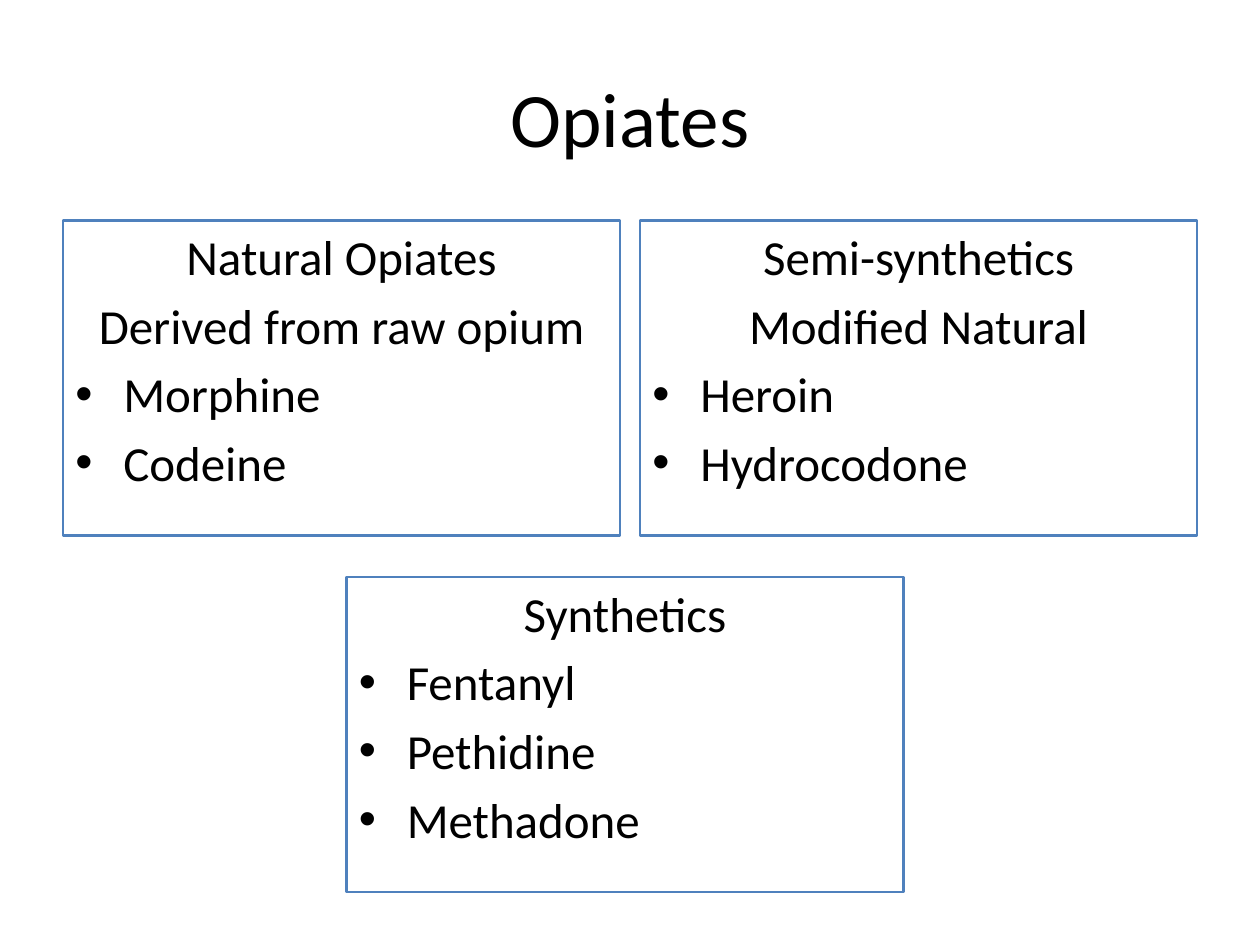
from pptx import Presentation
from pptx.dml.color import RGBColor
from pptx.enum.shapes import MSO_SHAPE as Shape
from pptx.enum.text import MSO_ANCHOR as Anchor, PP_ALIGN as Align
from pptx.oxml.ns import qn
from pptx.util import Inches, Pt
from lxml.etree import SubElement as Sub

BLACK = RGBColor(0x00, 0x00, 0x00)
BLUE = RGBColor(0x4F, 0x81, 0xBD)

WIDE, HIGH = 4.42, 2.5
LEFT, RIGHT, MID = 0.5, 5.08, 2.75
TOP, LOW = 1.75, 4.58

CARDS = [
    (LEFT, TOP, ["Natural Opiates", "Derived from raw opium"],
     ["Morphine", "Codeine"]),
    (RIGHT, TOP, ["Semi-synthetics", "Modified Natural"],
     ["Heroin", "Hydrocodone"]),
    (MID, LOW, ["Synthetics"], ["Fentanyl", "Pethidine", "Methadone"]),
]


def apply(item, vals):
    for name, val in vals.items():
        setattr(item, name, val)


class Deck:
    font = {"name": "Calibri", "bold": False}
    big, body = Pt(44), Pt(28)
    gap = Pt(5.6)
    dent = Inches(0.38)

    def __init__(self):
        self.prs = Presentation()
        apply(self.prs, {"slide_width": Inches(10),
                         "slide_height": Inches(7.5)})
        self.slide = self.prs.slides.add_slide(self.prs.slide_layouts[5])

    def label(self, par, text, size, align):
        par.alignment = align
        run = par.add_run()
        run.text = text
        apply(run.font, {**self.font, "size": size})
        run.font.color.rgb = BLACK

    def title(self, text):
        head = self.slide.shapes.title
        apply(head, {"left": Inches(0.5), "top": Inches(0.3),
                     "width": Inches(9), "height": Inches(1.25)})
        frame = head.text_frame
        frame.vertical_anchor = Anchor.MIDDLE
        self.label(frame.paragraphs[0], text, self.big, Align.CENTER)

    def bullet(self, par):
        props = par._p.get_or_add_pPr()
        props.set("marL", str(self.dent))
        props.set("indent", str(-self.dent))
        Sub(props, qn("a:buFont")).set("typeface", "Arial")
        Sub(props, qn("a:buChar")).set("char", "•")

    def card(self, left, top, heads, drugs):
        box = self.slide.shapes.add_shape(
            Shape.RECTANGLE, Inches(left), Inches(top),
            Inches(WIDE), Inches(HIGH))
        box.shadow.inherit = False
        box.fill.background()
        box.line.color.rgb = BLUE
        box.line.width = Pt(1.5)
        frame = box.text_frame
        apply(frame, {"word_wrap": True, "vertical_anchor": Anchor.TOP})
        for spot, text in enumerate(heads + drugs):
            par = frame.add_paragraph() if spot else frame.paragraphs[0]
            par.space_before = self.gap
            is_head = spot < len(heads)
            self.label(par, text, self.body,
                       Align.CENTER if is_head else Align.LEFT)
            if not is_head:
                self.bullet(par)


def main():
    deck = Deck()
    deck.title("Opiates")
    for card in CARDS:
        deck.card(*card)
    deck.prs.save("out.pptx")


if __name__ == "__main__":
    main()
